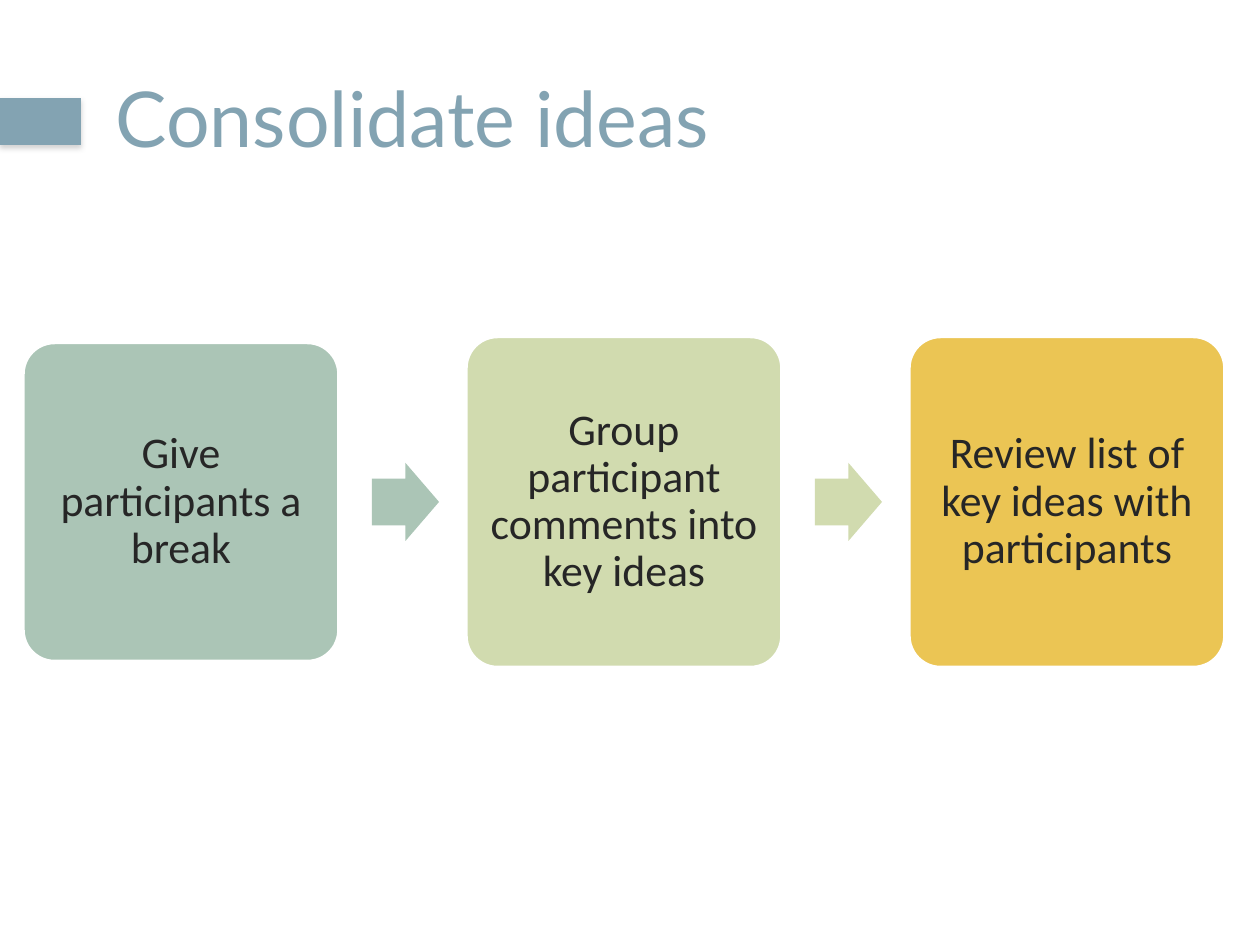
from dataclasses import dataclass

from lxml.etree import SubElement
from pptx import Presentation
from pptx.dml.color import RGBColor
from pptx.enum.shapes import MSO_SHAPE
from pptx.enum.text import MSO_ANCHOR, MSO_AUTO_SIZE, PP_ALIGN
from pptx.oxml.ns import qn
from pptx.shapes.autoshape import Shape
from pptx.slide import Slide
from pptx.text.text import TextFrame
from pptx.util import Emu, Pt

EMU_PER_PX = 914400 / 126
BLUE = RGBColor(0x83, 0xA3, 0xB2)
TEAL = RGBColor(0xAB, 0xC5, 0xB6)
GREEN = RGBColor(0xD1, 0xDB, 0xAF)
GOLD = RGBColor(0xEB, 0xC5, 0x54)
DARK = RGBColor(0x26, 0x26, 0x26)
WHITE = RGBColor(0xFF, 0xFF, 0xFF)

FIRST_LEFT, STEP_PITCH, MIDDLE = 23, 443, 502
CARD_WIDTH = 316
ARROW_OFFSET, ARROW_WIDTH, ARROW_HEIGHT = 349, 67, 78


@dataclass(frozen=True)
class Step:
    """One card of the process."""

    text: str
    color: RGBColor
    height: int


STEPS = [
    Step("Give participants a break", TEAL, 319),
    Step("Group participant comments into key ideas", GREEN, 331),
    Step("Review list of key ideas with participants", GOLD, 331),
]


def px(value: float) -> Emu:
    """Turn pixels into EMU."""
    return Emu(round(value * EMU_PER_PX))


def add_block(slide: Slide, kind: MSO_SHAPE, left: float, top: float,
              width: float, height: float, color: RGBColor) -> Shape:
    """Add a flat filled shape without outline or shadow."""
    shape = slide.shapes.add_shape(kind, px(left), px(top), px(width), px(height))
    shape.shadow.inherit = False
    shape.fill.solid()
    shape.fill.fore_color.rgb = color
    shape.line.fill.background()
    return shape


def add_text(frame: TextFrame, text: str, font: str, size: int,
             color: RGBColor, alignment: PP_ALIGN) -> None:
    """Write one formatted run in the middle of a text frame."""
    frame.word_wrap = True
    frame.auto_size = MSO_AUTO_SIZE.NONE
    frame.vertical_anchor = MSO_ANCHOR.MIDDLE
    paragraph = frame.paragraphs[0]
    paragraph.alignment = alignment
    run = paragraph.add_run()
    run.text = text
    run.font.name = font
    run.font.size = Pt(size)
    run.font.color.rgb = color


def add_soft_shadow(shape: Shape) -> None:
    """Give a shape a soft grey shadow below it."""
    effects = shape.element.spPr.find(qn("a:effectLst"))
    shadow = SubElement(effects, qn("a:outerShdw"), blurRad=str(Pt(3.1)),
                        dist=str(Pt(1.8)), dir="5400000", rotWithShape="0")
    color = SubElement(shadow, qn("a:srgbClr"), val="808080")
    SubElement(color, qn("a:alpha"), val="35000")


def add_title(slide: Slide, text: str) -> None:
    """Place the title and the bar that leads into it."""
    bar = add_block(slide, MSO_SHAPE.RECTANGLE, 0, 98, 81, 47, BLUE)
    add_soft_shadow(bar)
    title = slide.shapes.title
    title.left, title.top, title.width, title.height = px(103), px(38), px(1094), px(158)
    add_text(title.text_frame, text, "Lato", 44, BLUE, PP_ALIGN.LEFT)


def add_card(slide: Slide, step: Step, left: int) -> None:
    """Add the rounded card of a step."""
    card = add_block(slide, MSO_SHAPE.ROUNDED_RECTANGLE, left,
                     MIDDLE - step.height / 2, CARD_WIDTH, step.height, step.color)
    card.adjustments[0] = 0.1
    card.line.color.rgb = WHITE
    card.line.width = Pt(2)
    frame = card.text_frame
    frame.margin_left = frame.margin_right = px(12)
    frame.margin_top = frame.margin_bottom = px(12)
    add_text(frame, step.text, "Calibri", 25, DARK, PP_ALIGN.CENTER)
    frame.paragraphs[0].line_spacing = 0.9


def add_arrow(slide: Slide, color: RGBColor, left: int) -> None:
    """Add the arrow that leads to the next card."""
    arrow = add_block(slide, MSO_SHAPE.RIGHT_ARROW, left,
                      MIDDLE - ARROW_HEIGHT / 2, ARROW_WIDTH, ARROW_HEIGHT, color)
    arrow.adjustments[0] = 0.6
    arrow.adjustments[1] = 0.5


def main() -> None:
    """Build the slide and save it."""
    presentation = Presentation()
    presentation.slide_width, presentation.slide_height = px(1260), px(945)
    slide = presentation.slides.add_slide(presentation.slide_layouts[5])
    add_title(slide, "Consolidate ideas")
    for index, step in enumerate(STEPS):
        left = FIRST_LEFT + index * STEP_PITCH
        add_card(slide, step, left)
        if index < len(STEPS) - 1:
            add_arrow(slide, step.color, left + ARROW_OFFSET)
    presentation.save("out.pptx")


if __name__ == "__main__":
    main()
